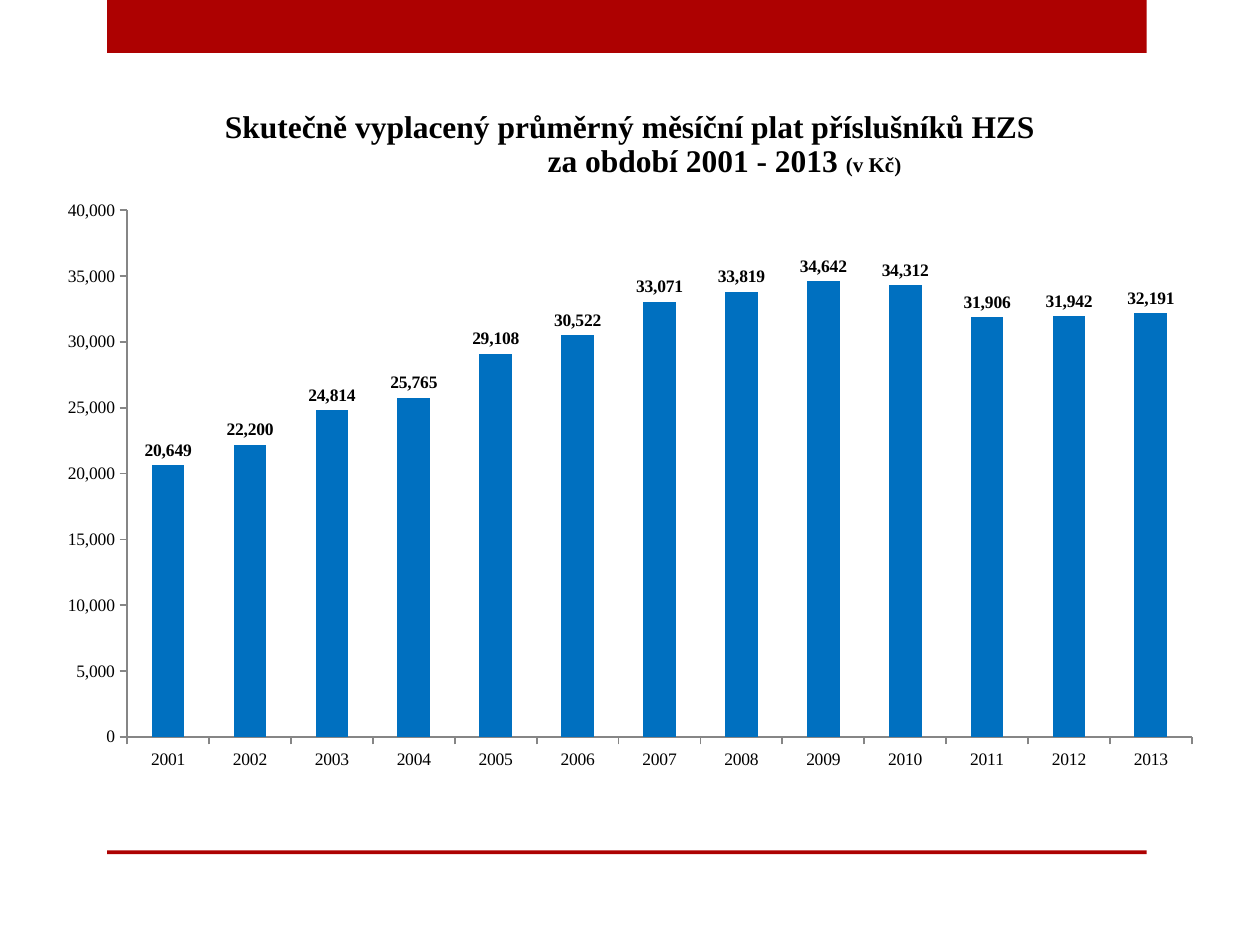
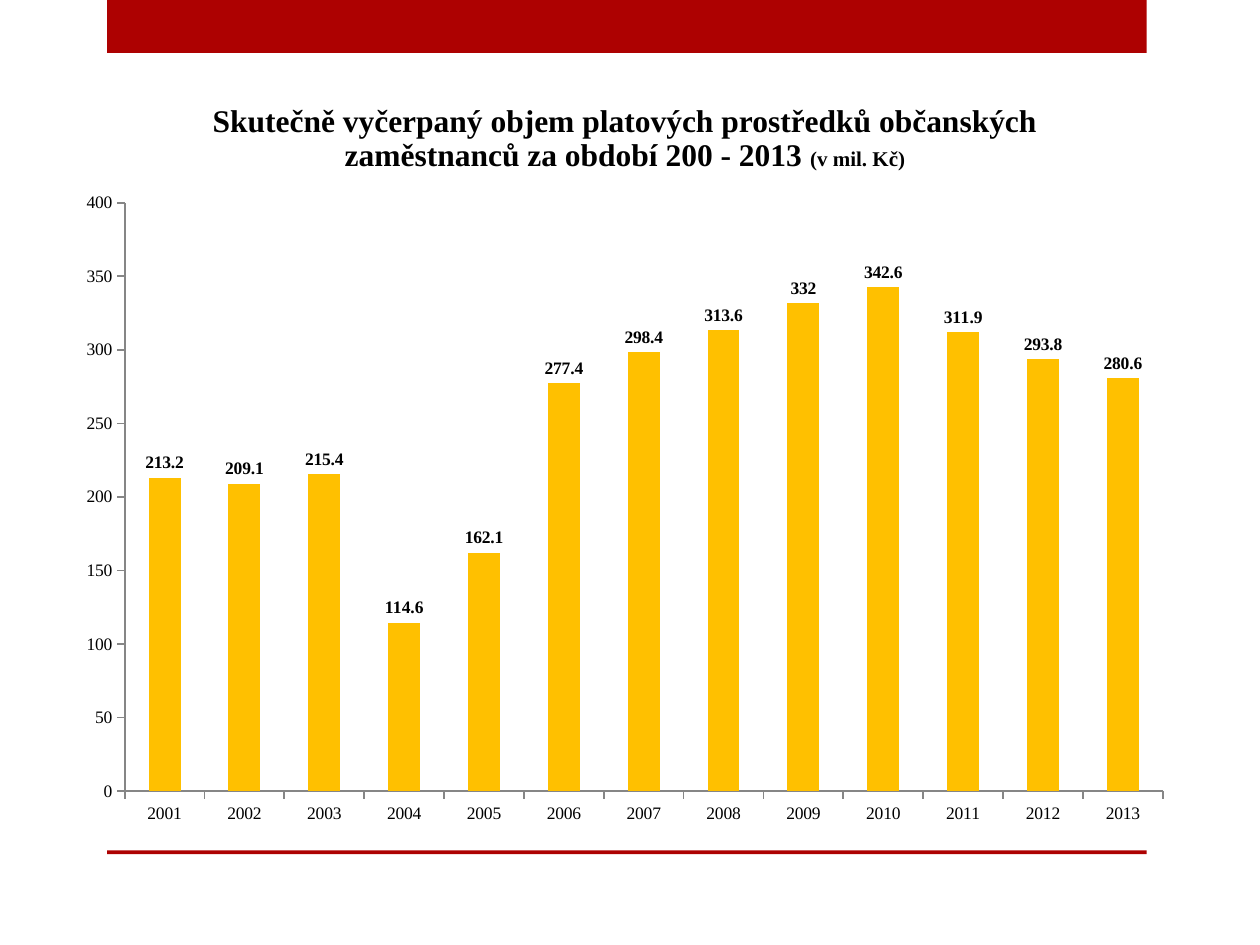
from lxml import etree
from pptx import Presentation
from pptx.chart.data import CategoryChartData
from pptx.dml.color import RGBColor
from pptx.enum import chart as ch, shapes, text
from pptx.oxml import ns, parse_xml
from pptx.util import Inches, Pt

RED = RGBColor(0xAD, 0x01, 0x01)
BLUE = RGBColor(0x00, 0x70, 0xC0)
GOLD = RGBColor(0xFF, 0xC0, 0x00)
GREY = RGBColor(0x86, 0x86, 0x86)
BLACK = RGBColor(0, 0, 0)
FACE = "Times New Roman"
YEARS = [str(year) for year in range(2001, 2014)]

# Boxes are left, top, width, height; the plot box is on the slide too
PAGES = [
    dict(lines=["Skutečně vyplacený průměrný měsíční plat příslušníků HZS",
                "za období 2001 - 2013 "],
         unit="(v Kč)", indent=1.5, head=(1, 0.8, 8, 0.7),
         frame=(0.35, 0.68, 9.29, 5.54), plot=(1.01, 1.67, 8.45, 4.18),
         color=BLUE, top=40000, step=5000, fmt="#,##0",
         vals=[20649, 22200, 24814, 25765, 29108, 30522, 33071,
               33819, 34642, 34312, 31906, 31942, 32191]),
    dict(lines=["Skutečně vyčerpaný objem platových prostředků občanských",
                "zaměstnanců za období 200 - 2013 "],
         unit="(v mil. Kč)", indent=0, head=(0.96, 0.75, 8, 0.7),
         frame=(0.51, 0.6, 8.9, 6.06), plot=(0.99, 1.61, 8.24, 4.67),
         color=GOLD, top=400, step=50, fmt="General",
         vals=[213.2, 209.1, 215.4, 114.6, 162.1, 277.4, 298.4,
               313.6, 332, 342.6, 311.9, 293.8, 280.6]),
]


def style(font, size, bold):
    form = dict(name=FACE, size=Pt(size), bold=bold)
    for key, val in form.items():
        setattr(font, key, val)
    font.color.rgb = BLACK


def place(chart, frame, plot):
    """Fix the inner plot area, given in inches on the slide."""
    parts = [(plot[0] - frame[0]) / frame[2], (plot[1] - frame[1]) / frame[3],
             plot[2] / frame[2], plot[3] / frame[3]]
    area = chart.element.find(".//" + ns.qn("c:plotArea"))
    for old in area.findall(ns.qn("c:layout")):
        area.remove(old)
    grid = parse_xml(f"<c:layout {ns.nsdecls('c')}><c:manualLayout/></c:layout>")
    tags = [("layoutTarget", "inner"), ("xMode", "edge"), ("yMode", "edge")]
    tags += [(tag, f"{part:.4f}") for tag, part in zip("xywh", parts)]
    for tag, val in tags:
        etree.SubElement(grid[0], ns.qn("c:" + tag)).set("val", val)
    area.insert(0, grid)


deck = Presentation()
deck.slide_width, deck.slide_height = Inches(10), Inches(7.5)
base = deck.slide_layouts.get_by_name("Title Only")

for num, page in enumerate(PAGES):
    slide = deck.slides.add_slide(base)

    # Red bands, made once and moved to the shared layout
    if num == 0:
        for idn, (top, high) in enumerate([(0, 0.42), (6.75, 0.03)], 90):
            band = slide.shapes.add_shape(
                shapes.MSO_SHAPE.RECTANGLE, Inches(0.85), Inches(top),
                Inches(8.25), Inches(high))
            band.shadow.inherit = False
            band.fill.solid()
            band.fill.fore_color.rgb = RED
            band.line.fill.background()
            band.element.nvSpPr.cNvPr.set("id", str(idn))
            base.shapes.element.append(band.element)

    # Column chart
    data = CategoryChartData()
    data.categories = YEARS
    data.add_series("Series 1", page["vals"])
    chart = slide.shapes.add_chart(
        ch.XL_CHART_TYPE.COLUMN_CLUSTERED, *map(Inches, page["frame"]), data).chart
    chart.has_title = chart.has_legend = False
    style(chart.font, 10, False)
    place(chart, page["frame"], page["plot"])

    cols = chart.plots[0]
    cols.gap_width = 150
    cols.vary_by_categories = False
    fill = cols.series[0].format.fill
    fill.solid()
    fill.fore_color.rgb = page["color"]

    cols.has_data_labels = True
    tags = cols.data_labels
    form = dict(show_value=True, number_format=page["fmt"],
                number_format_is_linked=False,
                position=ch.XL_LABEL_POSITION.OUTSIDE_END)
    for key, val in form.items():
        setattr(tags, key, val)
    style(tags.font, 10, True)

    # Axes
    for axis in (chart.category_axis, chart.value_axis):
        axis.has_major_gridlines = False
        axis.major_tick_mark = ch.XL_TICK_MARK.OUTSIDE
        axis.format.line.color.rgb = GREY
        axis.format.line.width = Pt(1)
    form = dict(minimum_scale=0, maximum_scale=page["top"], major_unit=page["step"])
    for key, val in form.items():
        setattr(axis, key, val)
    axis.tick_labels.number_format = page["fmt"]
    axis.tick_labels.number_format_is_linked = False

    # Title, above the chart
    title = slide.shapes.title
    slide.shapes.element.append(title.element)
    for key, val in zip(("left", "top", "width", "height"), page["head"]):
        setattr(title, key, Inches(val))
    body = title.text_frame
    form = dict(margin_left=0, margin_right=0, margin_top=0, margin_bottom=0,
                word_wrap=True, auto_size=text.MSO_AUTO_SIZE.NONE,
                vertical_anchor=text.MSO_ANCHOR.MIDDLE)
    for key, val in form.items():
        setattr(body, key, val)
    body.text = "\n".join(page["lines"])
    for para in body.paragraphs:
        para.alignment = text.PP_ALIGN.CENTER
        para.line_spacing = Pt(19.4)
        style(para.runs[0].font, 18, True)
    unit = para.add_run()
    unit.text = page["unit"]
    style(unit.font, 12, True)
    if page["indent"]:
        para._p.get_or_add_pPr().set("marL", str(Inches(page["indent"])))

deck.save("out.pptx")
